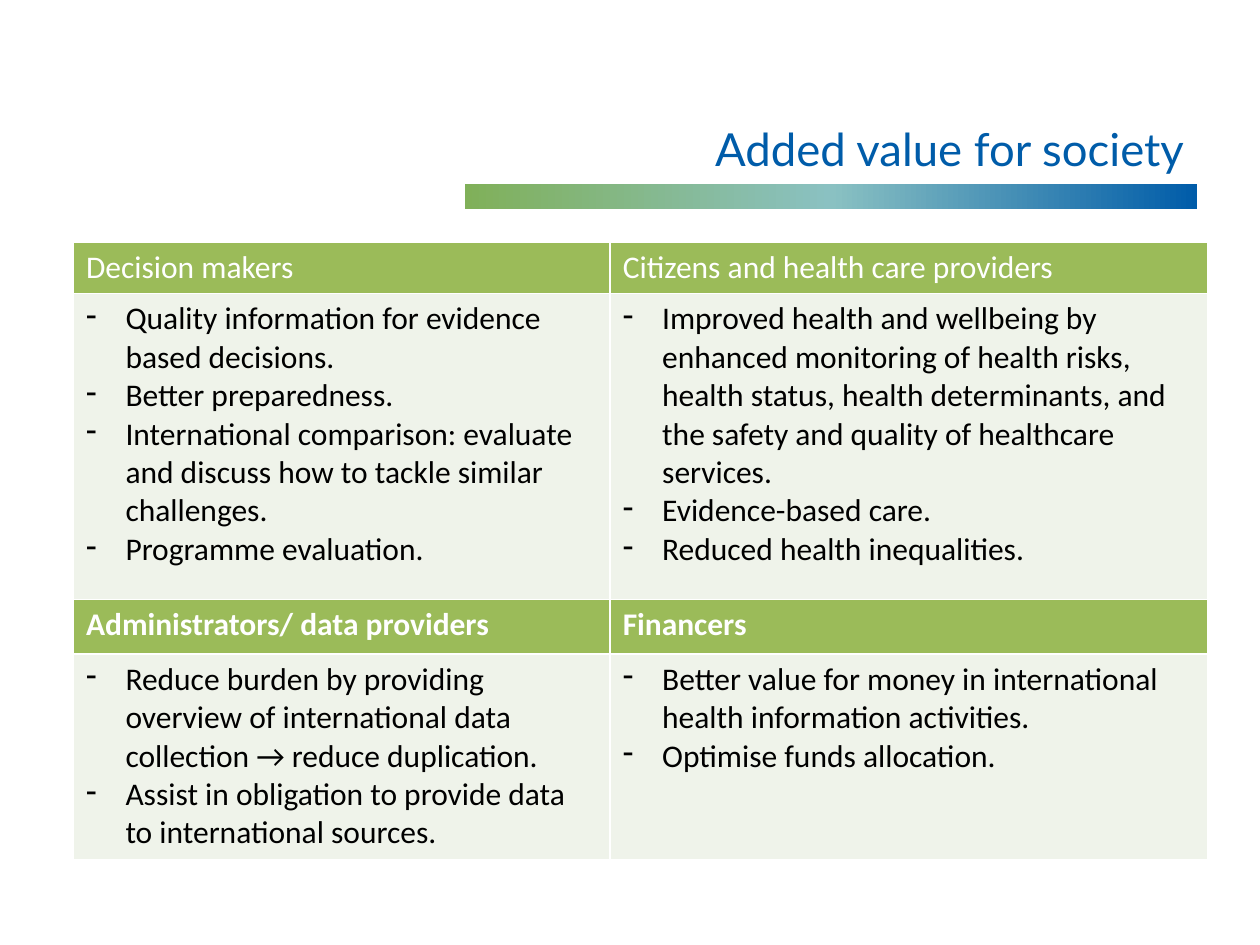
import copy

import lxml.etree
import pptx
import pptx.dml.color
import pptx.enum.shapes
import pptx.enum.text
import pptx.oxml.ns
import pptx.util

Pt = pptx.util.Pt
qn = pptx.oxml.ns.qn

COLORS = {
    "blue": "005CA9",
    "teal": "8AC1C2",
    "leaf": "80B059",
    "header": "9BBB59",
    "body": "EFF3EA",
    "white": "FFFFFF",
    "black": "000000",
}


class SlideBuilder:
    """Holds the style and the current slide, and draws its elements."""

    title_font = "Lato"
    table_font = "Calibri"
    title_size = 26
    table_size = 18
    indent = 22.5
    border_width = 1

    def __init__(self, slide):
        self.slide = slide

    def color(self, name):
        return pptx.dml.color.RGBColor.from_string(COLORS[name])

    def format_runs(self, paragraph, font, size, color, bold=False):
        for run in paragraph.runs:
            run.font.name = font
            run.font.size = Pt(size)
            run.font.bold = bold
            run.font.color.rgb = self.color(color)

    def title(self, text, left, top, width, height):
        shape = self.slide.shapes.add_textbox(Pt(left), Pt(top), Pt(width), Pt(height))
        text_frame = shape.text_frame
        text_frame.word_wrap = True
        text_frame.vertical_anchor = pptx.enum.text.MSO_ANCHOR.BOTTOM
        text_frame.text = text
        paragraph = text_frame.paragraphs[0]
        paragraph.alignment = pptx.enum.text.PP_ALIGN.RIGHT
        self.format_runs(paragraph, self.title_font, self.title_size, "blue")

    def gradient_bar(self, left, top, width, height, colors):
        shape = self.slide.shapes.add_shape(
            pptx.enum.shapes.MSO_SHAPE.RECTANGLE, Pt(left), Pt(top), Pt(width), Pt(height)
        )
        shape.shadow.inherit = False
        shape.line.fill.background()
        shape.fill.gradient()
        shape.fill.gradient_angle = 0
        stop_list = shape._element.spPr.find(qn("a:gradFill")).find(qn("a:gsLst"))
        stop_list.insert(1, copy.deepcopy(stop_list[0]))
        for index, (stop, name) in enumerate(zip(shape.fill.gradient_stops, colors)):
            stop.position = index / (len(colors) - 1)
            stop.color.rgb = self.color(name)

    def borders(self, cell):
        properties = cell._tc.get_or_add_tcPr()
        for index, side in enumerate(("lnL", "lnR", "lnT", "lnB")):
            line = lxml.etree.Element(qn(f"a:{side}"), w=str(Pt(self.border_width)))
            fill = lxml.etree.SubElement(line, qn("a:solidFill"))
            lxml.etree.SubElement(fill, qn("a:srgbClr"), val=COLORS["white"])
            properties.insert(index, line)

    def dash(self, paragraph):
        properties = paragraph._p.get_or_add_pPr()
        properties.set("marL", str(Pt(self.indent)))
        properties.set("indent", str(-Pt(self.indent)))
        lxml.etree.SubElement(properties, qn("a:buChar"), char="-")

    def cell(self, cell, content, bold):
        is_header = isinstance(content, str)
        cell.fill.solid()
        cell.fill.fore_color.rgb = self.color("header" if is_header else "body")
        self.borders(cell)
        cell.text_frame.text = content if is_header else "\n".join(content)
        for paragraph in cell.text_frame.paragraphs:
            if not is_header:
                self.dash(paragraph)
            self.format_runs(
                paragraph,
                self.table_font,
                self.table_size,
                "white" if is_header else "black",
                is_header and bold,
            )

    def table(self, left, top, widths, heights, rows, bold_row):
        table = self.slide.shapes.add_table(
            len(heights), len(widths), Pt(left), Pt(top), Pt(sum(widths)), Pt(sum(heights))
        ).table
        for column, width in zip(table.columns, widths):
            column.width = Pt(width)
        for index, (row, height, contents) in enumerate(zip(table.rows, heights, rows)):
            row.height = Pt(height)
            for cell, content in zip(row.cells, contents):
                self.cell(cell, content, index == bold_row)


ROWS = [
    ["Decision makers", "Citizens and health care providers"],
    [
        [
            "Quality information for evidence based decisions.",
            "Better preparedness.",
            "International comparison: evaluate and discuss how to tackle similar challenges.",
            "Programme evaluation.",
        ],
        [
            "Improved health and wellbeing by enhanced monitoring of health risks, "
            "health status, health determinants, and the safety and quality of "
            "healthcare services.",
            "Evidence-based care.",
            "Reduced health inequalities.",
        ],
    ],
    ["Administrators/ data providers", "Financers"],
    [
        [
            "Reduce burden by providing overview of international data collection "
            "→ reduce duplication.",
            "Assist in obligation to provide data to international sources.",
        ],
        [
            "Better value for money in international health information activities.",
            "Optimise funds allocation.",
        ],
    ],
]


def main():
    presentation = pptx.Presentation()
    presentation.slide_width = Pt(720)
    presentation.slide_height = Pt(540)
    builder = SlideBuilder(presentation.slides.add_slide(presentation.slide_layouts[6]))
    builder.gradient_bar(265.7, 105.1, 418.3, 14.4, ["leaf", "teal", "blue"])
    builder.title("Added value for society", 36, 21.6, 648, 82)
    builder.table(42, 138.2, [306.7, 341.3], [29.5, 175, 31, 117.4], ROWS, bold_row=2)
    presentation.save("out.pptx")


if __name__ == "__main__":
    main()
